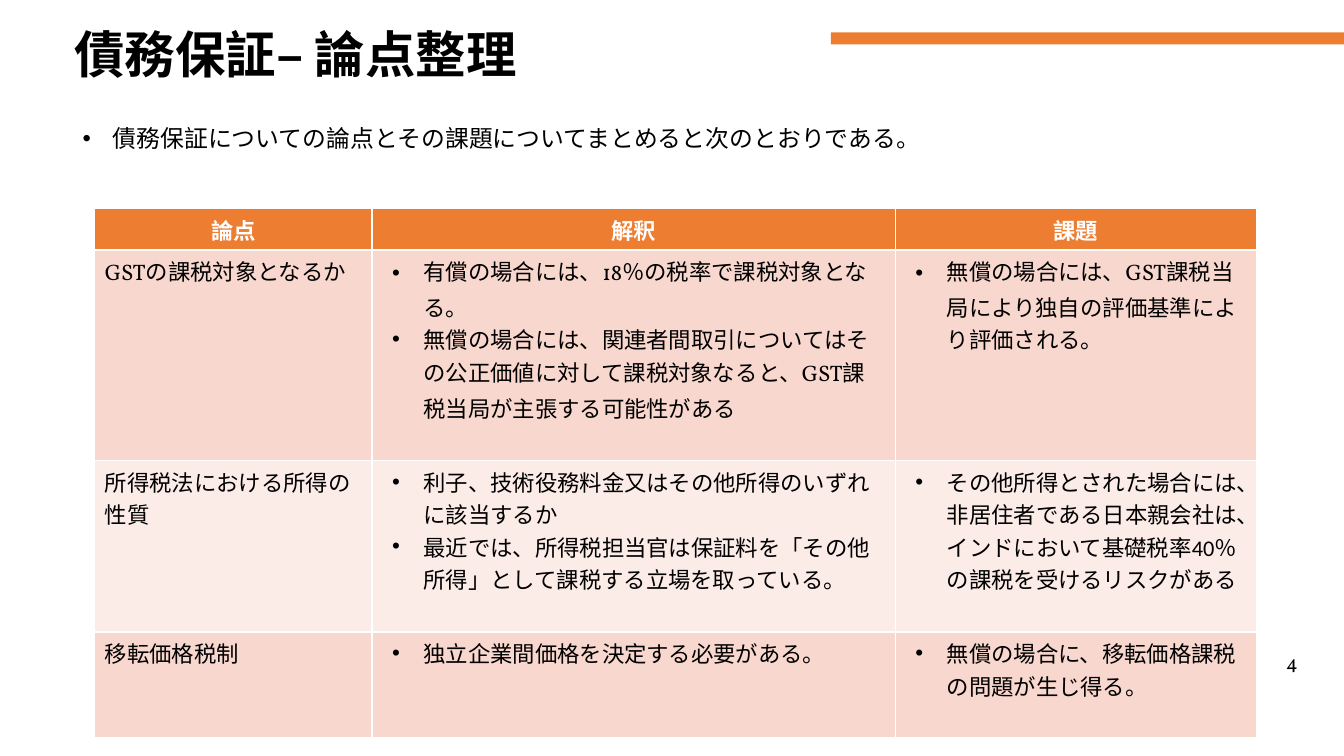
"""Build the debt guarantee issues slide."""
from lxml import etree
from pptx import Presentation
from pptx.dml.color import RGBColor
from pptx.enum.shapes import MSO_SHAPE
from pptx.enum.text import MSO_ANCHOR, PP_ALIGN
from pptx.oxml.ns import qn
from pptx.util import Inches, Pt

RECT = MSO_SHAPE.RECTANGLE
MIDDLE = MSO_ANCHOR.MIDDLE
CENTER = PP_ALIGN.CENTER
COLORS = {"accent": "ED7D31", "dark": "F8D7CE", "light": "FCECE8",
          "black": "000000", "white": "FFFFFF"}
SERIF, SANS, PLAIN = "Vollkorn", "DejaVu Sans", "Calibri"


def add_run(para, text, size, font=SERIF, color="black", bold=False):
    run = para.add_run()
    run.text = text
    run.font.size = Pt(size)
    run.font.name = font
    run.font.bold = bold
    run.font.color.rgb = RGBColor.from_string(COLORS[color])


def set_bullet(para, left, hang):
    props = para._p.get_or_add_pPr()
    props.set("marL", str(Inches(left)))
    props.set("indent", str(-Inches(hang)))
    etree.SubElement(props, qn("a:buFont")).set("typeface", "Arial")
    etree.SubElement(props, qn("a:buChar")).set("char", "•")


prs = Presentation()
prs.slide_width, prs.slide_height = Inches(13.33), Inches(7.5)
slide = prs.slides.add_slide(prs.slide_layouts[6])
shapes = slide.shapes

title = shapes.add_textbox(Inches(0.64), Inches(0.01), Inches(11.5), Inches(1.11)).text_frame
title.word_wrap = True
title.vertical_anchor = MIDDLE
title.paragraphs[0].line_spacing = 0.9
add_run(title.paragraphs[0], "債務保証– 論点整理", 36, bold=True)

lead = shapes.add_textbox(Inches(0.72), Inches(1.18), Inches(11.95), Inches(0.65)).text_frame
lead.word_wrap = True
set_bullet(lead.paragraphs[0], 0.3, 0.3)
add_run(lead.paragraphs[0], "債務保証についての論点とその課題についてまとめると次のとおりである。", 17)

bar = shapes.add_shape(RECT, Inches(8.24), Inches(0.32), Inches(5.1), Inches(0.12))
bar.shadow.inherit = False
bar.fill.solid()
bar.fill.fore_color.rgb = RGBColor.from_string(COLORS["accent"])
bar.line.fill.background()

page = shapes.add_textbox(Inches(12.67), Inches(6.45), Inches(0.29), Inches(0.34)).text_frame
page.word_wrap = True
page.margin_left = page.margin_right = page.margin_top = page.margin_bottom = 0
page.paragraphs[0].alignment = CENTER
page.paragraphs[0].space_before = Pt(4.5)
add_run(page.paragraphs[0], "4", 14)

HEADS = ["論点", "解釈", "課題"]
ISSUES = [
    [[[("GSTの課税対象となるか", SERIF)]],
     [[("有償の場合には、18％の税率で課税対象となる。", SERIF)],
      [("無償の場合には、関連者間取引についてはその公正価値に対して課税対象な", SERIF),
       ("ると、", SANS), ("GST", SERIF), ("課税当局が主張する可能性がある", SANS)]],
     [[("無償の場合には、GST", SERIF), ("課税当局により独自の", SANS),
       ("評価基準により評価される。", SERIF)]]],
    [[[("所得税法における所得の", SERIF)], [("性質", SERIF)]],
     [[("利子、技術役務料金又はその他所得のいずれに該当するか", SERIF)],
      [("最近では、所得税担当官は保証料を「その他所得」として課税する立場を取っている。", SERIF)]],
     [[("その他所得とされた場合には、", SERIF),
       ("非居住者である日本親会社は、インドにおいて基礎税率40％の課税を受けるリスクがある", PLAIN)]]],
    [[[("移転価格税制", SERIF)]],
     [[("独立企業間価格を決定する必要がある。", SERIF)]],
     [[("無償の場合に、移転価格課税の問題が生じ得る。", SERIF)]]],
]
WIDTHS = [2.75, 5.19, 3.58]
HEIGHTS = [0.41, 2.09, 1.7, 1.05]

table = shapes.add_table(len(HEIGHTS), len(WIDTHS), Inches(0.94), Inches(2.07),
                         Inches(sum(WIDTHS)), Inches(sum(HEIGHTS))).table
for col, width in zip(table.columns, WIDTHS):
    col.width = Inches(width)
for row, height in zip(table.rows, HEIGHTS):
    row.height = Inches(height)

for c, head in enumerate(HEADS):
    cell = table.cell(0, c)
    cell.fill.solid()
    cell.fill.fore_color.rgb = RGBColor.from_string(COLORS["accent"])
    para = cell.text_frame.paragraphs[0]
    para.alignment = CENTER
    add_run(para, head, 16, color="white", bold=True)

for r, issue in enumerate(ISSUES, 1):
    for c, paras in enumerate(issue):
        cell = table.cell(r, c)
        cell.fill.solid()
        cell.fill.fore_color.rgb = RGBColor.from_string(COLORS["dark" if r % 2 else "light"])
        frame = cell.text_frame
        for i, runs in enumerate(paras):
            para = frame.add_paragraph() if i else frame.paragraphs[0]
            if c:
                set_bullet(para, 0.41, 0.31)
            for text, font in runs:
                add_run(para, text, 16, font)

prs.save("out.pptx")
